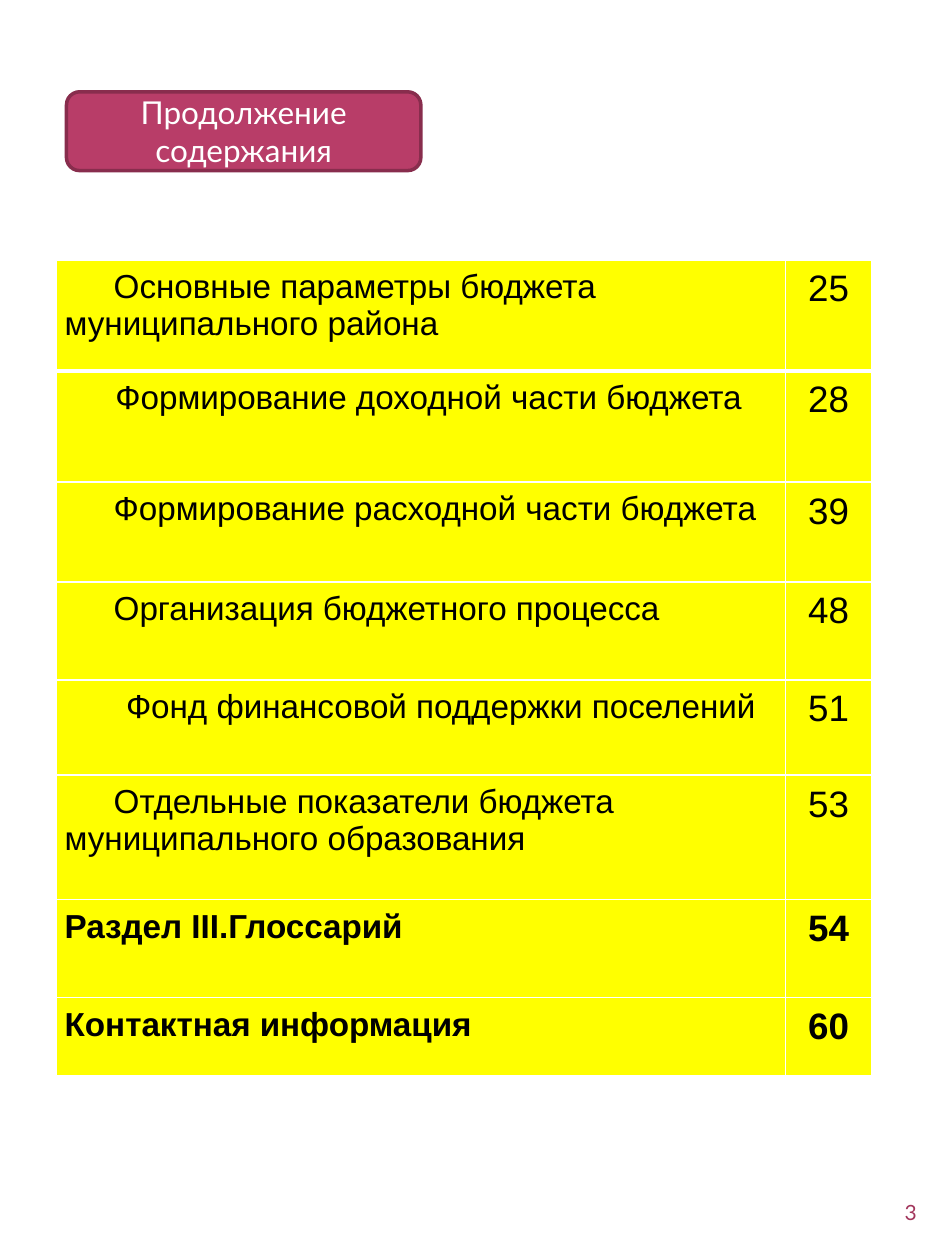
from lxml import etree
from pptx import Presentation
from pptx.dml.color import RGBColor
from pptx.enum import shapes, text
from pptx.oxml.ns import qn
from pptx.util import Pt

CONTENTS = [  # entry, page, first-line indent, row height, bold
    ("Основные параметры бюджета муниципального района", 25, 28, 63.5, False),
    ("Формирование доходной части бюджета", 28, 29, 63.5, False),
    ("Формирование расходной части бюджета", 39, 28, 57, False),
    ("Организация бюджетного процесса", 48, 28, 56, False),
    ("Фонд финансовой поддержки поселений", 51, 35, 54.5, False),
    ("Отдельные показатели бюджета муниципального образования", 53, 28, 71, False),
    ("Раздел III.Глоссарий", 54, 0, 56, True),
    ("Контактная информация", 60, 0, 45, True),
]


def color(value):
    return RGBColor.from_string(value)


class Page:
    HEAD_FONT, TABLE_FONT = "Lato", "Arial"
    BERRY, DARK, NUMBER = "B83D68", "882D4D", "A2365C"
    YELLOW, WHITE, BLACK = "FFFF00", "FFFFFF", "000000"
    INSET = 5

    def __init__(self, slide):
        self.s = slide

    def put_text(self, tf, content, size, font, ink, align, bold=False):
        tf.text = content
        p = tf.paragraphs[0]
        p.alignment = align
        f = p.runs[0].font
        f.size, f.name, f.bold = Pt(size), font, bold
        f.color.rgb = color(ink)
        return p

    def heading(self, content, x, y, w, h):
        sp = self.s.shapes.add_shape(
            shapes.MSO_SHAPE.FLOWCHART_ALTERNATE_PROCESS, Pt(x), Pt(y), Pt(w), Pt(h))
        sp.shadow.inherit = False
        sp.fill.solid()
        sp.fill.fore_color.rgb = color(self.BERRY)
        sp.line.color.rgb = color(self.DARK)
        sp.line.width = Pt(2)
        tf = sp.text_frame
        tf.word_wrap = True
        tf.vertical_anchor = text.MSO_ANCHOR.MIDDLE
        self.put_text(tf, content, 18, self.HEAD_FONT, self.WHITE, text.PP_ALIGN.CENTER)

    def page_number(self, number, x, y, w, h):
        tf = self.s.shapes.add_textbox(Pt(x), Pt(y), Pt(w), Pt(h)).text_frame
        tf.word_wrap = True
        tf.vertical_anchor = text.MSO_ANCHOR.MIDDLE
        self.put_text(tf, str(number), 12, self.HEAD_FONT, self.NUMBER, text.PP_ALIGN.RIGHT)

    def borders(self, cell, top, bottom):
        tc_pr = cell._tc.get_or_add_tcPr()
        for side, width in (("L", 1), ("R", 1), ("T", top), ("B", bottom)):
            ln = etree.SubElement(tc_pr, qn(f"a:ln{side}"), w=str(Pt(width)))
            fill = etree.SubElement(ln, qn("a:solidFill"))
            etree.SubElement(fill, qn("a:srgbClr"), val=self.WHITE)

    def cell(self, cell, row, content, size, align, bold):
        self.borders(cell, 3 if row == 1 else 1, 3 if row == 0 else 1)
        cell.fill.solid()
        cell.fill.fore_color.rgb = color(self.YELLOW)
        cell.margin_left = cell.margin_right = Pt(self.INSET)
        cell.margin_top = cell.margin_bottom = Pt(self.INSET)
        return self.put_text(cell.text_frame, content, size, self.TABLE_FONT,
                             self.BLACK, align, bold)

    def contents(self, entries, x, y, widths):
        height = sum(entry[3] for entry in entries)
        table = self.s.shapes.add_table(
            len(entries), len(widths), Pt(x), Pt(y), Pt(sum(widths)), Pt(height)).table
        for column, width in zip(table.columns, widths):
            column.width = Pt(width)
        for i, (title, number, indent, row_height, bold) in enumerate(entries):
            table.rows[i].height = Pt(row_height)
            p = self.cell(table.cell(i, 0), i, title, 19, text.PP_ALIGN.LEFT, bold)
            p._p.get_or_add_pPr().set("indent", str(Pt(indent)))
            self.cell(table.cell(i, 1), i, str(number), 21, text.PP_ALIGN.CENTER, bold)


def main():
    prs = Presentation()
    prs.slide_width, prs.slide_height = Pt(540), Pt(720)
    page = Page(prs.slides.add_slide(prs.slide_layouts[6]))
    page.page_number(3, 486, 679.5, 45, 26)
    page.contents(CONTENTS, 32, 148.5, (417, 49))
    page.heading("Продолжение содержания", 38, 52.5, 202.5, 45)
    prs.save("out.pptx")


if __name__ == "__main__":
    main()
